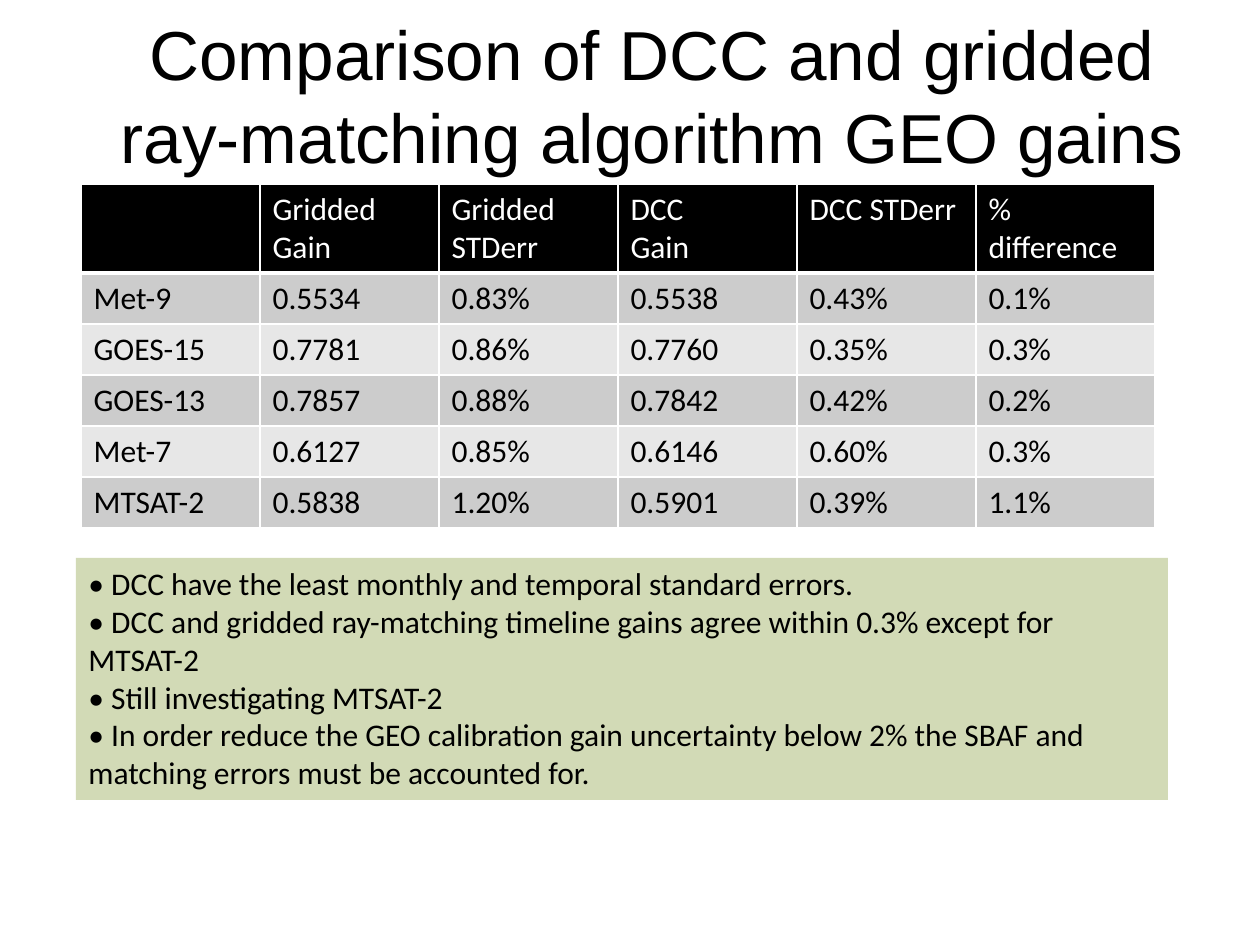
from lxml import etree
from pptx import Presentation
from pptx.dml.color import RGBColor
from pptx.enum.shapes import MSO_SHAPE
from pptx.enum.text import MSO_ANCHOR, PP_ALIGN
from pptx.oxml.ns import qn
from pptx.util import Emu, Pt

RECTANGLE = MSO_SHAPE.RECTANGLE
MIDDLE, TOP = MSO_ANCHOR.MIDDLE, MSO_ANCHOR.TOP
CENTER, LEFT = PP_ALIGN.CENTER, PP_ALIGN.LEFT

BLACK = RGBColor(0x00, 0x00, 0x00)
WHITE = RGBColor(0xFF, 0xFF, 0xFF)
DARK_BAND = RGBColor(0xCC, 0xCC, 0xCC)
LIGHT_BAND = RGBColor(0xE7, 0xE7, 0xE7)
GREEN = RGBColor(0xD2, 0xDA, 0xB6)

# Content
TITLE = "Comparison of DCC and gridded ray-matching algorithm GEO gains"
GAINS = [
    ("", "Gridded Gain", "Gridded STDerr", "DCC\nGain", "DCC STDerr", "% difference"),
    ("Met-9", "0.5534", "0.83%", "0.5538", "0.43%", "0.1%"),
    ("GOES-15", "0.7781", "0.86%", "0.7760", "0.35%", "0.3%"),
    ("GOES-13", "0.7857", "0.88%", "0.7842", "0.42%", "0.2%"),
    ("Met-7", "0.6127", "0.85%", "0.6146", "0.60%", "0.3%"),
    ("MTSAT-2", "0.5838", "1.20%", "0.5901", "0.39%", "1.1%"),
]
FINDINGS = [
    "• DCC have the least monthly and temporal standard errors.",
    "• DCC and gridded ray-matching timeline gains agree within 0.3% except for MTSAT-2",
    "• Still investigating MTSAT-2",
    "• In order reduce the GEO calibration gain uncertainty below 2% the SBAF and "
    "matching errors must be accounted for.",
]

# Layout in px, 126 to the inch
SLIDE_SIZE = (1260, 945)
TITLE_BOX = (94, 42, 1116, 105)
TABLE_LEFT, TABLE_TOP = 81, 184
COLUMN_WIDTH, HEADER_HEIGHT, ROW_HEIGHT = 179, 89, 51
FINDINGS_BOX = (76, 558, 1092, 242)

TITLE_FONT = {"name": "Arial", "size": Pt(39.6)}
BODY_FONT = {"name": "Calibri", "size": Pt(18)}


def px(length):
    return Emu(round(length * 914400 / 126))


def write(frame, text, font, color, align=LEFT):
    frame.word_wrap = True
    frame.text = text
    for paragraph in frame.paragraphs:
        paragraph.alignment = align
        for attribute, value in font.items():
            setattr(paragraph.font, attribute, value)
        paragraph.font.color.rgb = color
        for run in paragraph.runs:
            for attribute, value in font.items():
                setattr(run.font, attribute, value)
            run.font.color.rgb = color


def add_borders(cell, bottom_width):
    properties = cell._tc.get_or_add_tcPr()
    widths = {"a:lnL": 1, "a:lnR": 1, "a:lnT": 1, "a:lnB": bottom_width}
    for position, (side, width) in enumerate(widths.items()):
        line = etree.Element(qn(side), w=str(Pt(width)))
        fill = etree.SubElement(line, qn("a:solidFill"))
        etree.SubElement(fill, qn("a:srgbClr"), val=str(WHITE))
        properties.insert(position, line)


def main():
    deck = Presentation()
    deck.slide_width, deck.slide_height = map(px, SLIDE_SIZE)
    slide = deck.slides.add_slide(deck.slide_layouts[6])

    # Title
    title = slide.shapes.add_textbox(*map(px, TITLE_BOX))
    title.text_frame.vertical_anchor = MIDDLE
    write(title.text_frame, TITLE, TITLE_FONT, BLACK, CENTER)

    # Gain table
    row_heights = [HEADER_HEIGHT] + [ROW_HEIGHT] * (len(GAINS) - 1)
    columns = len(GAINS[0])
    table = slide.shapes.add_table(
        len(GAINS), columns, px(TABLE_LEFT), px(TABLE_TOP),
        px(COLUMN_WIDTH * columns), px(sum(row_heights))).table
    for column in table.columns:
        column.width = px(COLUMN_WIDTH)
    for r, values in enumerate(GAINS):
        table.rows[r].height = px(row_heights[r])
        header = r == 0
        band = BLACK if header else DARK_BAND if r % 2 else LIGHT_BAND
        for c, value in enumerate(values):
            cell = table.cell(r, c)
            cell.fill.solid()
            cell.fill.fore_color.rgb = band
            write(cell.text_frame, value, BODY_FONT, WHITE if header else BLACK)
            for paragraph in cell.text_frame.paragraphs:
                paragraph.font.bold = False
                for run in paragraph.runs:
                    run.font.bold = False
            add_borders(cell, 3 if header else 1)

    # Findings
    findings = slide.shapes.add_shape(RECTANGLE, *map(px, FINDINGS_BOX))
    findings.shadow.inherit = False
    findings.fill.solid()
    findings.fill.fore_color.rgb = GREEN
    findings.line.fill.background()
    findings.text_frame.vertical_anchor = TOP
    write(findings.text_frame, "\n".join(FINDINGS), BODY_FONT, BLACK)

    deck.save("out.pptx")


if __name__ == "__main__":
    main()
